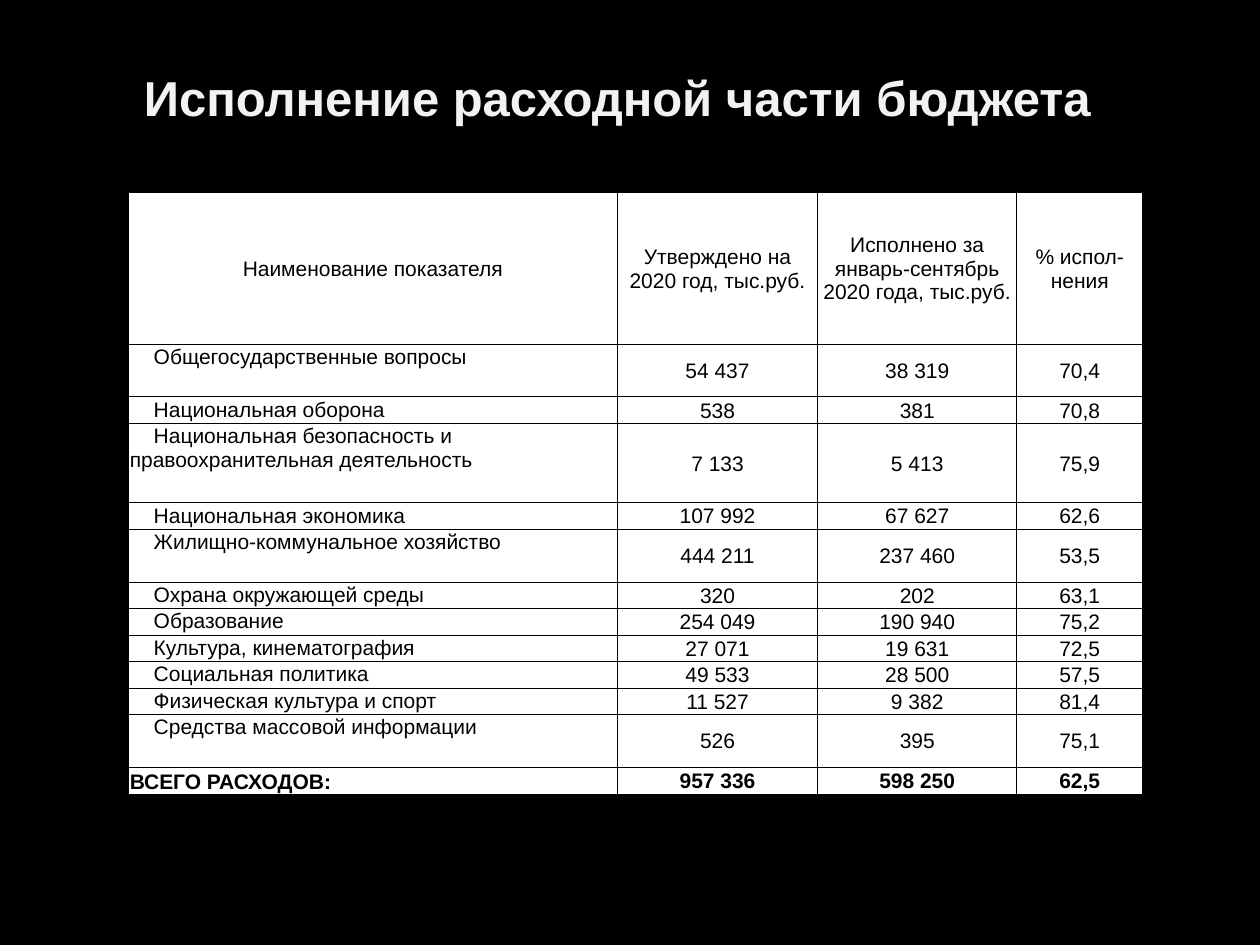
from pptx import Presentation
from pptx.dml.color import RGBColor
from pptx.enum.text import MSO_ANCHOR as Anchor, PP_ALIGN as Align
from pptx.oxml.ns import qn
from pptx.util import Inches, Pt
from lxml.etree import SubElement

BLACK = RGBColor(0x00, 0x00, 0x00)
WHITE = RGBColor(0xFF, 0xFF, 0xFF)
LIGHT_GRAY = RGBColor(0xF2, 0xF2, 0xF2)

COLUMN_WIDTHS = [3.88, 1.59, 1.58, 1]
HEADER_HEIGHT = 1.2
LINE_HEIGHT = 0.21
HEADERS = [
    "Наименование показателя",
    "Утверждено на 2020 год, тыс.руб.",
    "Исполнено за январь-сентябрь 2020 года, тыс.руб.",
    "% испол-нения",
]
EXPENSES = [
    ("Общегосударственные вопросы", "54 437", "38 319", "70,4"),
    ("Национальная оборона", "538", "381", "70,8"),
    ("Национальная безопасность и правоохранительная деятельность",
     "7 133", "5 413", "75,9"),
    ("Национальная экономика", "107 992", "67 627", "62,6"),
    ("Жилищно-коммунальное хозяйство", "444 211", "237 460", "53,5"),
    ("Охрана окружающей среды", "320", "202", "63,1"),
    ("Образование", "254 049", "190 940", "75,2"),
    ("Культура, кинематография", "27 071", "19 631", "72,5"),
    ("Социальная политика", "49 533", "28 500", "57,5"),
    ("Физическая культура и спорт", "11 527", "9 382", "81,4"),
    ("Средства массовой информации", "526", "395", "75,1"),
]
TOTAL = ("ВСЕГО РАСХОДОВ:", "957 336", "598 250", "62,5")
LINES_PER_EXPENSE = [2, 1, 3, 1, 2, 1, 1, 1, 1, 1, 2]


def write_text(frame, text, size=12, color=BLACK, bold=False,
               align=Align.CENTER, indent=0):
    frame.word_wrap = True
    para = frame.paragraphs[0]
    para.alignment = align
    if indent:
        para._p.get_or_add_pPr().set("indent", str(Inches(indent)))
    span = para.add_run()
    span.text = text
    span.font.name = "Arial"
    span.font.size = Pt(size)
    span.font.bold = bold
    span.font.color.rgb = color


def add_title(page, text):
    box = page.shapes.add_textbox(Inches(0.5), Inches(0.29),
                                  Inches(9), Inches(0.96))
    frame = box.text_frame
    frame.vertical_anchor = Anchor.MIDDLE
    frame.margin_right = Inches(0.3)
    write_text(frame, text, size=28, color=LIGHT_GRAY, bold=True)


def add_borders(cell):
    properties = cell._tc.get_or_add_tcPr()
    for position, side in enumerate(["lnL", "lnR", "lnT", "lnB"]):
        line = SubElement(properties, qn(f"a:{side}"), w=str(Pt(0.5)))
        properties.insert(position, line)
        fill = SubElement(line, qn("a:solidFill"))
        SubElement(fill, qn("a:srgbClr"), val=str(BLACK))


def fill_cell(cell, text, anchor=Anchor.MIDDLE, **text_format):
    cell.fill.solid()
    cell.fill.fore_color.rgb = WHITE
    cell.margin_left = cell.margin_top = cell.margin_right = Inches(0.01)
    cell.margin_bottom = 0
    cell.vertical_anchor = anchor
    write_text(cell.text_frame, text, **text_format)
    add_borders(cell)


def add_budget_table(page):
    heights = [HEADER_HEIGHT]
    heights += [lines * LINE_HEIGHT for lines in LINES_PER_EXPENSE]
    heights.append(LINE_HEIGHT)
    frame = page.shapes.add_table(
        len(heights), len(COLUMN_WIDTHS), Inches(1.02), Inches(1.53),
        Inches(sum(COLUMN_WIDTHS)), Inches(sum(heights)))
    table = frame.table
    table.first_row = table.horz_banding = False
    for column, width in zip(table.columns, COLUMN_WIDTHS):
        column.width = Inches(width)
    for row, height in zip(table.rows, heights):
        row.height = Inches(height)

    for cell, header in zip(table.rows[0].cells, HEADERS):
        fill_cell(cell, header)
    name_format = dict(anchor=Anchor.TOP, align=Align.LEFT, indent=0.19)
    total_format = dict(anchor=Anchor.BOTTOM, align=Align.LEFT)
    for index, (name, *values) in enumerate([*EXPENSES, TOTAL], start=1):
        is_total = index == len(heights) - 1
        name_cell, *value_cells = table.rows[index].cells
        fill_cell(name_cell, name, bold=is_total,
                  **(total_format if is_total else name_format))
        for cell, value in zip(value_cells, values):
            fill_cell(cell, value, bold=is_total)


def main():
    deck = Presentation()
    deck.slide_width = Inches(10)
    deck.slide_height = Inches(7.5)
    page = deck.slides.add_slide(deck.slide_layouts[6])
    page.background.fill.solid()
    page.background.fill.fore_color.rgb = BLACK
    add_title(page, "Исполнение расходной части бюджета")
    add_budget_table(page)
    deck.save("out.pptx")


if __name__ == "__main__":
    main()
